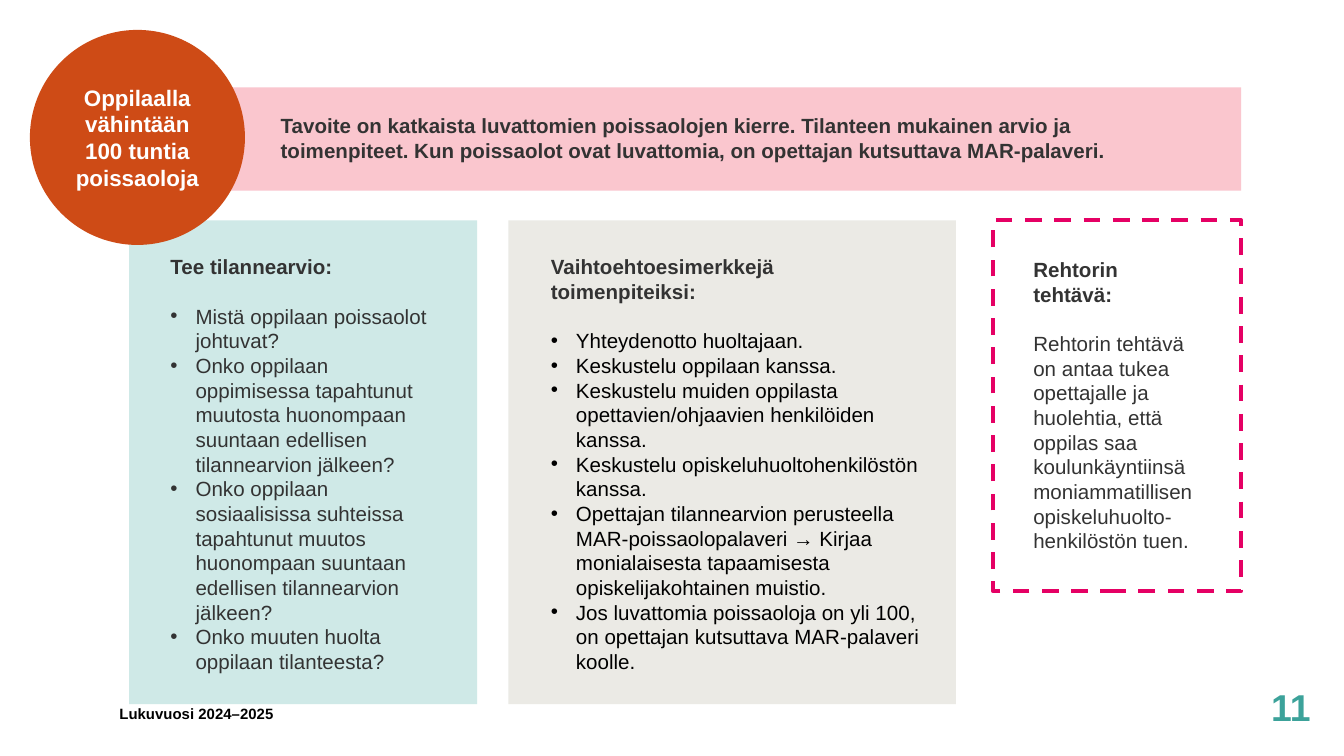
"""Build the slide on steps for a pupil with at least 100 hours of absence."""
from pptx import Presentation
from pptx.dml.color import RGBColor
from pptx.enum.dml import MSO_LINE_DASH_STYLE as Dash
from pptx.enum.shapes import MSO_SHAPE as Preset
from pptx.enum.text import MSO_ANCHOR as Anchor, MSO_AUTO_SIZE as AutoSize, PP_ALIGN as Align
from pptx.oxml.ns import qn
from pptx.util import Inches, Pt
from lxml.etree import SubElement

WIDTH = Inches(10)
HEIGHT = WIDTH * 9 // 16
WHITE = RGBColor(0xFF, 0xFF, 0xFF)
BLACK = RGBColor(0x00, 0x00, 0x00)
DARK_GREY = RGBColor(0x33, 0x33, 0x33)
MINT = RGBColor(0xCF, 0xE9, 0xE7)
PINK = RGBColor(0xFA, 0xC6, 0xCE)
ORANGE = RGBColor(0xCE, 0x4B, 0x16)
SAND = RGBColor(0xEB, 0xEA, 0xE5)
MAGENTA = RGBColor(0xE5, 0x00, 0x64)
TEAL = RGBColor(0x3C, 0xA2, 0x9A)

FONT = "Arial"
BODY_SIZE = 11
LEADING = 1.2
BULLET_INDENT = 1.87
PANEL_TOP, PANEL_HEIGHT = 16.4, 36

ASSESSMENT = [
    "Mistä oppilaan poissaolot johtuvat?",
    "Onko oppilaan oppimisessa tapahtunut muutosta huonompaan suuntaan edellisen "
    "tilannearvion jälkeen?",
    "Onko oppilaan sosiaalisissa suhteissa tapahtunut muutos huonompaan suuntaan "
    "edellisen tilannearvion jälkeen?",
    "Onko muuten huolta oppilaan tilanteesta?",
]
MEASURES = [
    "Yhteydenotto huoltajaan.",
    "Keskustelu oppilaan kanssa.",
    "Keskustelu muiden oppilasta opettavien/ohjaavien henkilöiden kanssa.",
    "Keskustelu opiskeluhuoltohenkilöstön kanssa.",
    "Opettajan tilannearvion perusteella MAR-poissaolopalaveri → Kirjaa "
    "monialaisesta tapaamisesta opiskelijakohtainen muistio.",
    "Jos luvattomia poissaoloja on yli 100, on opettajan kutsuttava MAR-palaveri koolle.",
]
PRINCIPAL_TASK = [
    "Rehtorin tehtävä on antaa tukea opettajalle ja huolehtia, että oppilas saa "
    "koulunkäyntiinsä moniammatillisen opiskeluhuolto-henkilöstön tuen."
]


def share(percent):
    """Turn a percentage of the slide's width into a length."""
    return round(WIDTH * percent / 100)


def add_panel(slide, box, fill=None, outline=None, preset=Preset.RECTANGLE):
    """Add a preset shape with a plain fill or a dashed outline."""
    shape = slide.shapes.add_shape(preset, *map(share, box))
    shape.shadow.inherit = False
    if fill is None:
        shape.fill.background()
    else:
        shape.fill.solid()
        shape.fill.fore_color.rgb = fill
    if outline is None:
        shape.line.fill.background()
    else:
        shape.line.color.rgb = outline
        shape.line.width = Pt(2.25)
        shape.line.dash_style = Dash.DASH
    return shape


def add_bullet(paragraph):
    """Give a paragraph a hanging round bullet."""
    properties = paragraph._p.get_or_add_pPr()
    properties.set("marL", str(share(BULLET_INDENT)))
    properties.set("indent", str(-share(BULLET_INDENT)))
    SubElement(properties, qn("a:buFont")).set("typeface", FONT)
    SubElement(properties, qn("a:buChar")).set("char", "•")


def write(paragraph, text, size=BODY_SIZE, color=DARK_GREY, bold=True,
          align=Align.LEFT, bullet=False, before=0):
    """Write one formatted paragraph."""
    if bullet:
        add_bullet(paragraph)
    paragraph.alignment = align
    paragraph.line_spacing = Pt(LEADING * size)
    paragraph.space_before = Pt(before)
    run = paragraph.add_run()
    run.text = text
    run.font.name = FONT
    run.font.size = Pt(size)
    run.font.bold = bold
    run.font.color.rgb = color


def add_text(slide, box, text, wrap=True, **style):
    """Add a text box holding one paragraph and return its frame."""
    frame = slide.shapes.add_textbox(*map(share, box)).text_frame
    frame.word_wrap = wrap
    frame.auto_size = AutoSize.SHAPE_TO_FIT_TEXT
    write(frame.paragraphs[0], text, **style)
    return frame


def add_section(slide, box, heading, items, **style):
    """Add a bold heading followed, one line lower, by its items."""
    frame = add_text(slide, box, heading)
    for index, item in enumerate(items):
        gap = LEADING * BODY_SIZE if index == 0 else 0
        write(frame.add_paragraph(), item, bold=False, before=gap, **style)


def add_badge(slide, box, text):
    """Add the round badge with centred text."""
    frame = add_panel(slide, box, fill=ORANGE, preset=Preset.OVAL).text_frame
    frame.word_wrap = True
    frame.vertical_anchor = Anchor.MIDDLE
    write(frame.paragraphs[0], text, size=12, color=WHITE, align=Align.CENTER)


def main():
    """Build and save the slide."""
    presentation = Presentation()
    presentation.slide_width, presentation.slide_height = WIDTH, HEIGHT
    slide = presentation.slides.add_slide(presentation.slide_layouts[6])

    add_panel(slide, (9.6, PANEL_TOP, 25.9, PANEL_HEIGHT), fill=MINT)
    add_panel(slide, (9.6, 6.5, 82.75, 7.7), fill=PINK)
    add_badge(slide, (2.23, 2.23, 16, 16), "Oppilaalla vähintään 100 tuntia poissaoloja")
    add_text(slide, (19.9, 7.93, 70.6, 7.7),
             "Tavoite on katkaista luvattomien poissaolojen kierre. Tilanteen mukainen "
             "arvio ja toimenpiteet. Kun poissaolot ovat luvattomia, on opettajan "
             "kutsuttava MAR-palaveri.")
    add_section(slide, (11.7, 18.43, 22.3, 35.2), "Tee tilannearvio:", ASSESSMENT,
                bullet=True)

    add_panel(slide, (37.83, PANEL_TOP, 33.3, PANEL_HEIGHT), fill=SAND)
    add_section(slide, (40, 18.43, 29.5, 32.5), "Vaihtoehtoesimerkkejä toimenpiteiksi:",
                MEASURES, bullet=True, color=BLACK)

    add_panel(slide, (73.9, PANEL_TOP, 18.45, 27.6), outline=MAGENTA)
    add_section(slide, (75.9, 18.63, 14.3, 23.2), "Rehtorin tehtävä:", PRINCIPAL_TASK)

    add_text(slide, (7.9, 51.95, 13.7, 2.4), "Lukuvuosi 2024–2025", size=8, color=BLACK)
    add_text(slide, (93.6, 50.45, 5, 4.4), "11", wrap=False, size=20, color=TEAL)
    presentation.save("out.pptx")


if __name__ == "__main__":
    main()
